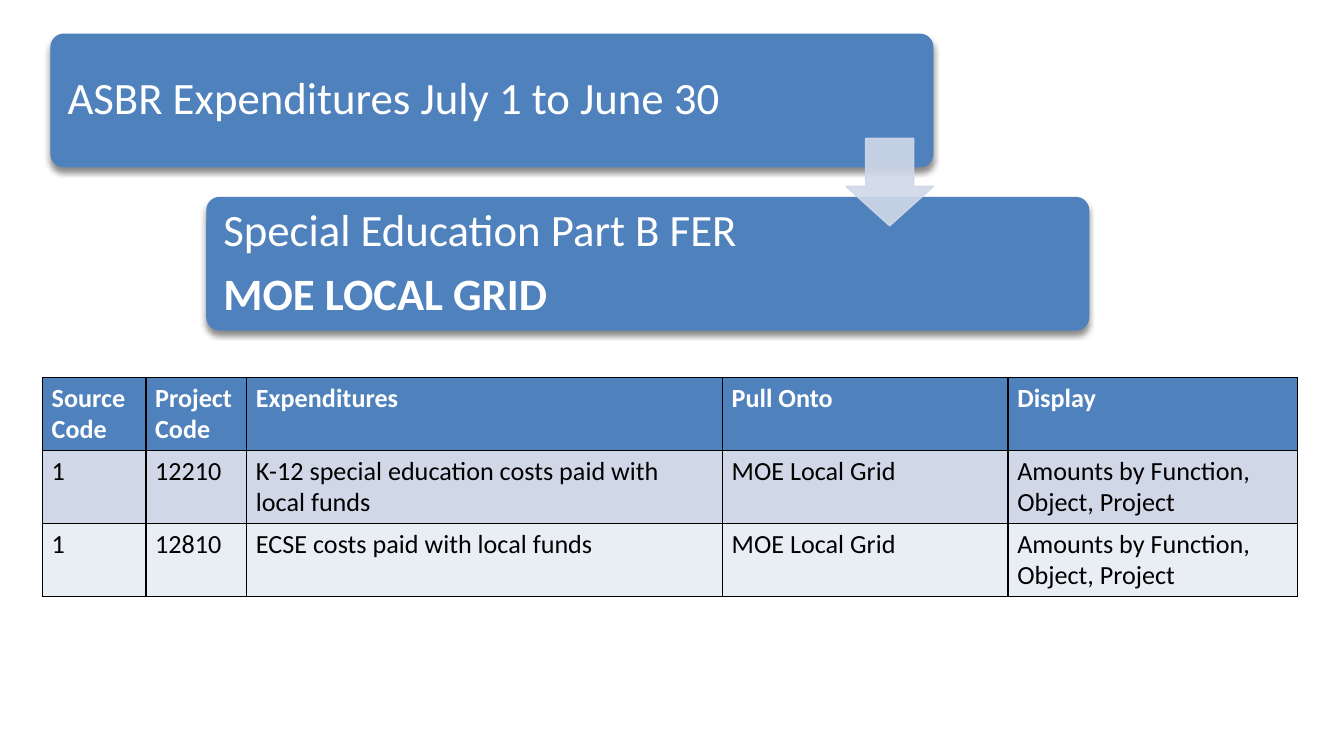
from dataclasses import dataclass

from lxml import etree
from pptx import Presentation
from pptx.dml.color import RGBColor
from pptx.enum.shapes import MSO_SHAPE
from pptx.enum.text import MSO_ANCHOR, PP_ALIGN
from pptx.oxml.ns import qn
from pptx.util import Pt

ROUNDED = MSO_SHAPE.ROUNDED_RECTANGLE
DOWN_ARROW = MSO_SHAPE.DOWN_ARROW
MIDDLE = MSO_ANCHOR.MIDDLE
LEFT = PP_ALIGN.LEFT

EMU_PER_PX = 4572  # 200 px to the inch
SLIDE_WIDTH, SLIDE_HEIGHT = 2000, 1125
FONT = "Calibri"
BLUE, PALE_BLUE, PALEST_BLUE = "4F81BD", "D0D8E8", "E9EDF4"
WHITE, BLACK = "FFFFFF", "000000"

TABLE_LEFT, TABLE_TOP = 63, 562
COLUMN_WIDTHS = (154, 150, 708, 425, 431)
ROW_HEIGHT = 106
EXPENDITURE_ROWS = (
    ("Source Code", "Project Code", "Expenditures", "Pull Onto", "Display"),
    ("1", "12210", "K-12 special education costs paid with local funds",
     "MOE Local Grid", "Amounts by Function, Object, Project"),
    ("1", "12810", "ECSE costs paid with local funds",
     "MOE Local Grid", "Amounts by Function, Object, Project"),
)
ROW_FILLS = (BLUE, PALE_BLUE, PALEST_BLUE)


@dataclass(frozen=True)
class Line:
    text: str
    bold: bool = False


@dataclass(frozen=True)
class Step:
    left: int
    top: int
    lines: tuple[Line, ...]


STEPS = (
    Step(75, 50, (Line("ASBR Expenditures July 1 to June 30"),)),
    Step(307, 293, (Line("Special Education Part B FER"),
                    Line("MOE LOCAL GRID", bold=True))),
)
STEP_WIDTH, STEP_HEIGHT = 1314, 199
ARROW_LEFT, ARROW_TOP, ARROW_SIZE = 1259, 206, 130


def px(length: int) -> int:
    return length * EMU_PER_PX


def rgb(color: str) -> RGBColor:
    return RGBColor.from_string(color)


def add_run(paragraph, line: Line, size: int, color: str) -> None:
    run = paragraph.add_run()
    run.text = line.text
    run.font.name = FONT
    run.font.size = Pt(size)
    run.font.bold = line.bold
    run.font.color.rgb = rgb(color)


def add_drop_shadow(shape) -> None:
    shape.shadow.inherit = False
    effects = shape._element.spPr.find(qn("a:effectLst"))
    shadow = etree.SubElement(effects, qn("a:outerShdw"), blurRad=str(Pt(3)),
                              dist=str(Pt(2.4)), dir="5400000", rotWithShape="0")
    color = etree.SubElement(shadow, qn("a:srgbClr"), val=BLACK)
    etree.SubElement(color, qn("a:alpha"), val="45000")


def add_step(slide, step: Step) -> None:
    banner = slide.shapes.add_shape(ROUNDED, px(step.left), px(step.top),
                                    px(STEP_WIDTH), px(STEP_HEIGHT))
    banner.adjustments[0] = 0.1
    banner.fill.solid()
    banner.fill.fore_color.rgb = rgb(BLUE)
    banner.line.fill.background()
    add_drop_shadow(banner)

    frame = banner.text_frame
    frame.word_wrap = True
    frame.vertical_anchor = MIDDLE
    frame.margin_left = frame.margin_right = px(20)
    frame.margin_top = frame.margin_bottom = px(8)
    for index, line in enumerate(step.lines):
        paragraph = frame.add_paragraph() if index else frame.paragraphs[0]
        paragraph.alignment = LEFT
        paragraph.line_spacing = 0.9
        paragraph.space_after = Pt(8.4)
        add_run(paragraph, line, 24, WHITE)


def add_step_arrow(slide) -> None:
    arrow = slide.shapes.add_shape(DOWN_ARROW, px(ARROW_LEFT), px(ARROW_TOP),
                                   px(ARROW_SIZE), px(ARROW_SIZE))
    arrow.adjustments[0] = 0.55
    arrow.adjustments[1] = 0.45
    arrow.shadow.inherit = False
    arrow.line.width = Pt(0.79)
    for fill in (arrow.fill, arrow.line.fill):
        fill.solid()
        fill.fore_color.rgb = rgb(PALE_BLUE)
    for color in arrow._element.spPr.iter(qn("a:srgbClr")):
        etree.SubElement(color, qn("a:alpha"), val="90000")


def add_cell_borders(cell) -> None:
    """Outline a cell; borders must precede the fill in its properties."""
    properties = cell._tc.get_or_add_tcPr()
    for position, side in enumerate(("a:lnL", "a:lnR", "a:lnT", "a:lnB")):
        border = etree.Element(qn(side), w=str(Pt(1)))
        fill = etree.SubElement(border, qn("a:solidFill"))
        etree.SubElement(fill, qn("a:srgbClr"), val=BLACK)
        properties.insert(position, border)


def add_expenditure_table(slide) -> None:
    table = slide.shapes.add_table(
        len(EXPENDITURE_ROWS), len(COLUMN_WIDTHS), px(TABLE_LEFT), px(TABLE_TOP),
        px(sum(COLUMN_WIDTHS)), px(ROW_HEIGHT * len(EXPENDITURE_ROWS))).table
    for column, width in zip(table.columns, COLUMN_WIDTHS):
        column.width = px(width)
    for index, (row, texts) in enumerate(zip(table.rows, EXPENDITURE_ROWS)):
        row.height = px(ROW_HEIGHT)
        is_header = index == 0
        for cell, text in zip(row.cells, texts):
            cell.margin_left = cell.margin_right = px(14)
            cell.margin_top = cell.margin_bottom = px(7)
            cell.fill.solid()
            cell.fill.fore_color.rgb = rgb(ROW_FILLS[index])
            add_cell_borders(cell)
            add_run(cell.text_frame.paragraphs[0], Line(text, bold=is_header),
                    14, WHITE if is_header else BLACK)


def main() -> None:
    presentation = Presentation()
    presentation.slide_width = px(SLIDE_WIDTH)
    presentation.slide_height = px(SLIDE_HEIGHT)
    blank_layout = presentation.slide_layouts[6]
    slide = presentation.slides.add_slide(blank_layout)
    add_expenditure_table(slide)
    for step in STEPS:
        add_step(slide, step)
    add_step_arrow(slide)
    presentation.save("out.pptx")


if __name__ == "__main__":
    main()
